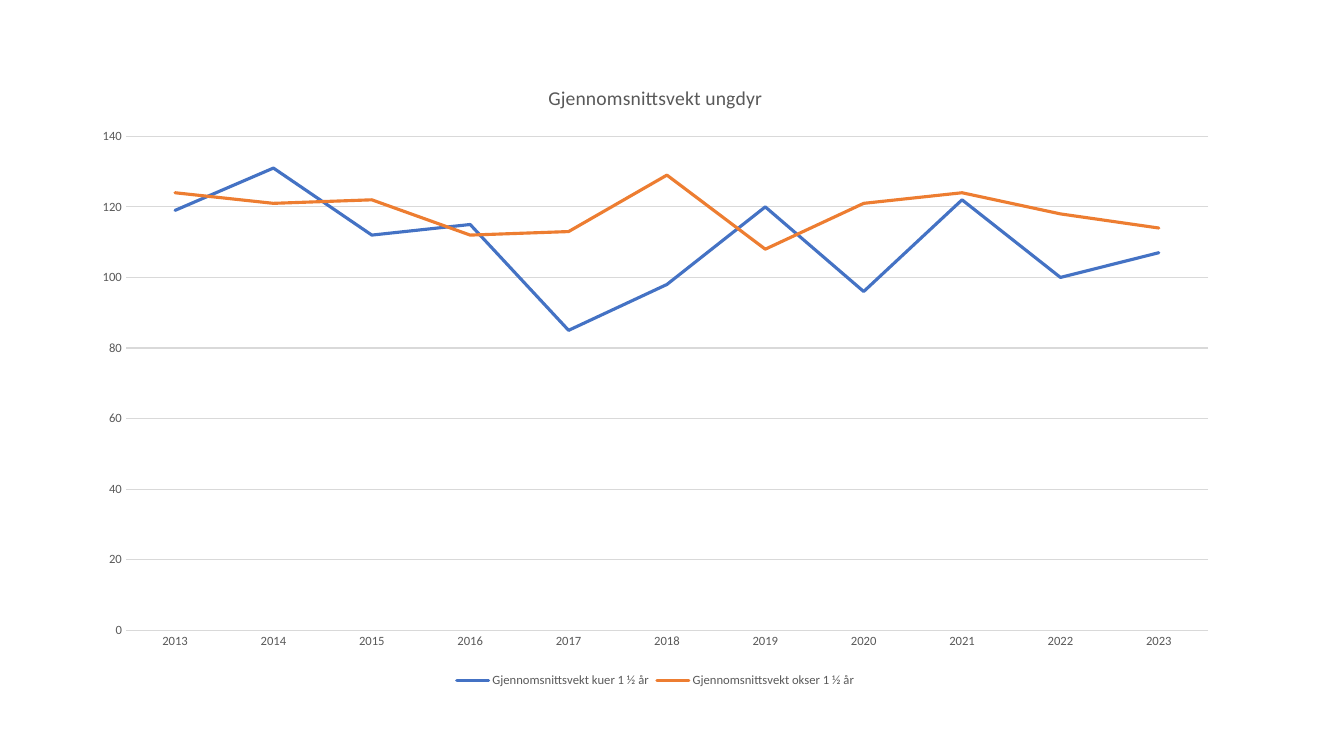
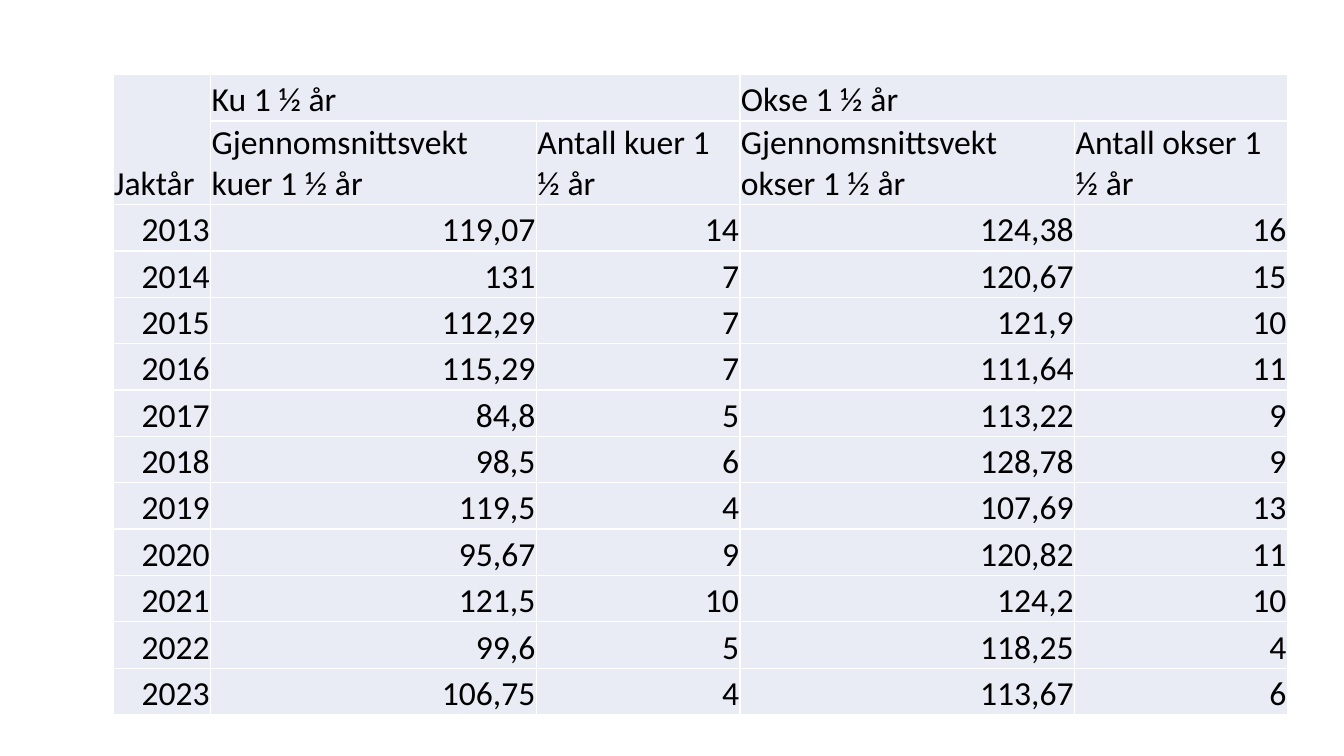
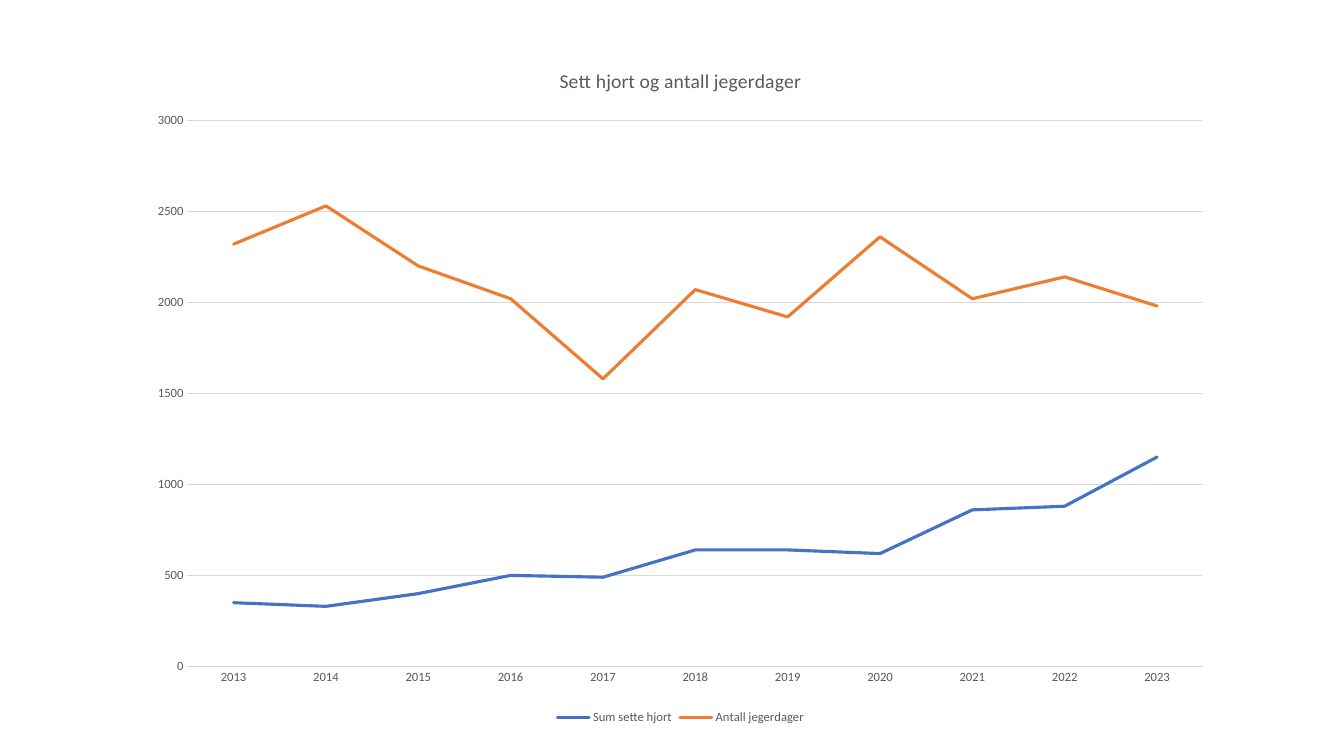
"""Build a deck of young deer weights, sightings and hunting days."""
from dataclasses import dataclass

from lxml import etree
from pptx import Presentation
from pptx.chart.data import CategoryChartData
from pptx.dml.color import RGBColor
from pptx.enum.chart import XL_CHART_TYPE, XL_LEGEND_POSITION, XL_MARKER_STYLE, XL_TICK_MARK
from pptx.enum.text import MSO_ANCHOR, PP_ALIGN
from pptx.oxml.ns import qn
from pptx.util import Inches, Pt

LINE_CHART = XL_CHART_TYPE.LINE
LEGEND_BOTTOM = XL_LEGEND_POSITION.BOTTOM
NO_MARKER = XL_MARKER_STYLE.NONE
NO_TICK = XL_TICK_MARK.NONE
BOTTOM = MSO_ANCHOR.BOTTOM
LEFT, RIGHT = PP_ALIGN.LEFT, PP_ALIGN.RIGHT


@dataclass(frozen=True)
class Theme:
    font: str = "Calibri"
    text: str = "000000"
    muted: str = "595959"
    grid: str = "D9D9D9"
    cell: str = "E9EBF5"
    border: str = "FFFFFF"
    series: tuple = ("4472C4", "ED7D31")
    title_size: float = 14
    label_size: float = 9
    table_size: float = 24
    grid_width: float = 0.75
    series_width: float = 2.25
    border_width: float = 1


YEARS = [str(year) for year in range(2013, 2024)]
COW_WEIGHT = "Gjennomsnittsvekt kuer 1 ½ år"
BULL_WEIGHT = "Gjennomsnittsvekt okser 1 ½ år"
WEIGHTS = [
    ("119,07", "14", "124,38", "16"),
    ("131", "7", "120,67", "15"),
    ("112,29", "7", "121,9", "10"),
    ("115,29", "7", "111,64", "11"),
    ("84,8", "5", "113,22", "9"),
    ("98,5", "6", "128,78", "9"),
    ("119,5", "4", "107,69", "13"),
    ("95,67", "9", "120,82", "11"),
    ("121,5", "10", "124,2", "10"),
    ("99,6", "5", "118,25", "4"),
    ("106,75", "4", "113,67", "6"),
]
HEADINGS = [
    ("Jaktår", "Ku 1 ½ år", "", "Okse 1 ½ år", ""),
    ("", COW_WEIGHT, "Antall kuer 1 ½ år", BULL_WEIGHT, "Antall okser 1 ½ år"),
]
HEADING_MERGES = [((0, 0), (1, 0)), ((0, 1), (0, 2)), ((0, 3), (0, 4))]
SIGHTINGS = {
    "Sum sette hjort": [350, 330, 400, 500, 490, 640, 640, 620, 860, 880, 1150],
    "Antall jegerdager": [2320, 2530, 2200, 2020, 1580, 2070, 1920, 2360, 2020, 2140, 1980],
}


def rounded_column(column):
    return [round(float(row[column].replace(",", "."))) for row in WEIGHTS]


class Deck:
    def __init__(self, theme):
        self.theme = theme
        self.deck = Presentation()
        self.deck.slide_width, self.deck.slide_height = Inches(13.33), Inches(7.5)
        self.page = None

    def add_page(self):
        self.page = self.deck.slides.add_slide(self.deck.slide_layouts[6])

    def style_font(self, font, size, color):
        font.name, font.size, font.bold = self.theme.font, Pt(size), False
        font.color.rgb = RGBColor.from_string(color)

    def style_line(self, line, color, width):
        line.color.rgb = RGBColor.from_string(color)
        line.width = Pt(width)

    def line_chart(self, bounds, title, series, top, step):
        theme = self.theme
        data = CategoryChartData()
        data.categories = YEARS
        for name, values in series.items():
            data.add_series(name, values)
        chart = self.page.shapes.add_chart(LINE_CHART, *map(Inches, bounds), data).chart
        self.style_font(chart.font, theme.label_size, theme.muted)

        chart.has_title = True
        heading = chart.chart_title.text_frame
        heading.text = title
        self.style_font(heading.paragraphs[0].font, theme.title_size, theme.muted)
        chart.chart_title.include_in_layout = False
        chart.has_legend = True
        chart.legend.position = LEGEND_BOTTOM
        chart.legend.include_in_layout = False
        self.style_font(chart.legend.font, theme.label_size, theme.muted)

        for axis in (chart.category_axis, chart.value_axis):
            axis.major_tick_mark = axis.minor_tick_mark = NO_TICK
            self.style_font(axis.tick_labels.font, theme.label_size, theme.muted)
        self.style_line(chart.category_axis.format.line, theme.grid, theme.grid_width)
        scale = chart.value_axis
        scale.minimum_scale, scale.maximum_scale, scale.major_unit = 0, top, step
        scale.format.line.fill.background()
        self.style_line(scale.major_gridlines.format.line, theme.grid, theme.grid_width)

        chart.plots[0].vary_by_categories = False
        for line, color in zip(chart.plots[0].series, theme.series):
            line.smooth = False
            line.marker.style = NO_MARKER
            self.style_line(line.format.line, color, theme.series_width)
            line.format.line.fill.fore_color.rgb = RGBColor.from_string(color)
            line.format.line._get_or_add_ln().set("cap", "rnd")

    def style_cell(self, cell, text, align):
        theme = self.theme
        cell.text = text
        cell.vertical_anchor = BOTTOM
        cell.margin_left = cell.margin_right = cell.margin_top = Inches(0.01)
        cell.margin_bottom = 0
        paragraph = cell.text_frame.paragraphs[0]
        paragraph.alignment = align
        self.style_font(paragraph.font, theme.table_size, theme.text)
        properties = cell._tc.get_or_add_tcPr()
        for side in ("lnL", "lnR", "lnT", "lnB"):
            border = etree.SubElement(properties, qn(f"a:{side}"), w=str(Pt(theme.border_width)))
            fill = etree.SubElement(border, qn("a:solidFill"))
            etree.SubElement(fill, qn("a:srgbClr"), val=theme.border)
        cell.fill.solid()
        cell.fill.fore_color.rgb = RGBColor.from_string(theme.cell)

    def table(self, left, top, widths, heights, rows, heading_count, merges):
        bounds = map(Inches, (left, top, sum(widths), sum(heights)))
        table = self.page.shapes.add_table(len(rows), len(widths), *bounds).table
        table.first_row = table.horz_banding = False
        for column, width in zip(table.columns, widths):
            column.width = Inches(width)
        for index, (row, height, texts) in enumerate(zip(table.rows, heights, rows)):
            row.height = Inches(height)
            for cell, text in zip(row.cells, texts):
                self.style_cell(cell, text, LEFT if index < heading_count else RIGHT)
        for start, end in merges:
            table.cell(*start).merge(table.cell(*end))


def main():
    deck = Deck(Theme())

    deck.add_page()
    weights = {COW_WEIGHT: rounded_column(0), BULL_WEIGHT: rounded_column(2)}
    deck.line_chart((0.79, 0.62, 11.42, 6.24), "Gjennomsnittsvekt ungdyr", weights, 140, 20)

    deck.add_page()
    rows = HEADINGS + [(year, *values) for year, values in zip(YEARS, WEIGHTS)]
    heights = [0.46, 0.83] + [0.46] * len(YEARS)
    widths = (0.97, 3.23, 2.02, 3.32, 2.11)
    deck.table(1.12, 0.74, widths, heights, rows, len(HEADINGS), HEADING_MERGES)

    deck.add_page()
    deck.line_chart((1.35, 0.44, 10.8, 6.79), "Sett hjort og antall jegerdager", SIGHTINGS, 3000, 500)

    deck.deck.save("out.pptx")


if __name__ == "__main__":
    main()
